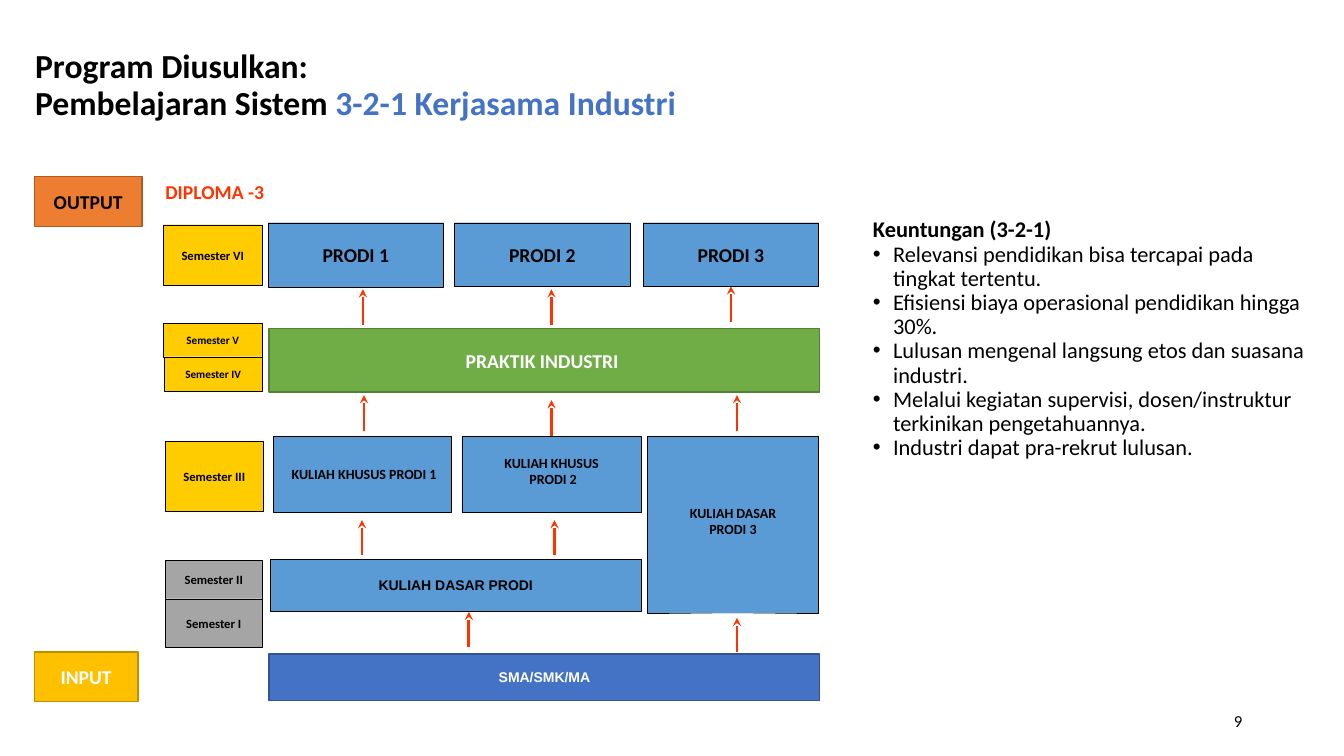
from dataclasses import dataclass

from lxml import etree
from pptx import Presentation
from pptx.dml.color import RGBColor
from pptx.enum.shapes import MSO_CONNECTOR, MSO_SHAPE
from pptx.enum.text import MSO_ANCHOR, PP_ALIGN
from pptx.oxml.ns import qn
from pptx.util import Inches, Pt

STRAIGHT = MSO_CONNECTOR.STRAIGHT
RECTANGLE = MSO_SHAPE.RECTANGLE
TOP, MIDDLE = MSO_ANCHOR.TOP, MSO_ANCHOR.MIDDLE
LEFT, CENTER, RIGHT = PP_ALIGN.LEFT, PP_ALIGN.CENTER, PP_ALIGN.RIGHT
TOP_SIDE, BOTTOM_SIDE = 0, 2

COLORS = {
    "black": "000000", "white": "FFFFFF", "red": "FF3300",
    "blue": "5B9BD5", "navy": "4472C4", "navy edge": "325491",
    "green": "70AD47", "green edge": "538035",
    "amber": "FFC000", "amber edge": "BD8E00",
    "orange": "ED7D31", "orange edge": "AF5C24",
    "yellow": "FFCC00", "grey": "A5A5A5",
}


@dataclass
class Block:
    text: str
    left: float
    top: float
    width: float
    height: float
    fill: str
    size: float
    ink: str = "black"
    font: str = "Calibri"


@dataclass
class Arrow:
    x: float
    bottom: float
    top: float
    start: str = ""
    end: str = ""


BLOCKS = [
    Block("INPUT", 0.34, 6.47, 1.03, 0.49, "amber", 14, "white"),
    Block("SMA/SMK/MA", 2.67, 6.49, 5.46, 0.46, "navy", 10, "white", "Arial"),
    Block("KULIAH DASAR\nPRODI 3", 6.42, 4.33, 1.7, 1.75, "blue", 10),
    Block("PRODI 1", 2.66, 2.21, 1.74, 0.64, "blue", 14),
    Block("PRODI 2", 4.51, 2.21, 1.74, 0.63, "blue", 14),
    Block("PRODI 3", 6.38, 2.21, 1.74, 0.63, "blue", 14),
    Block("Semester VI", 1.62, 2.23, 0.98, 0.6, "yellow", 9),
    Block("PRAKTIK INDUSTRI ", 2.67, 3.26, 5.46, 0.63, "green", 14, "white"),
    Block("Semester V", 1.62, 3.21, 0.98, 0.33, "yellow", 8),
    Block("Semester IV", 1.63, 3.54, 0.97, 0.34, "yellow", 8),
    Block("KULIAH DASAR PRODI", 2.68, 5.55, 3.68, 0.51, "blue", 10, font="Arial"),
    Block("Semester II", 1.64, 5.56, 0.96, 0.38, "grey", 9),
    Block("Semester I", 1.64, 5.94, 0.96, 0.48, "grey", 9),
    Block(" KULIAH KHUSUS PRODI 1", 2.71, 4.33, 1.77, 0.75, "blue", 10),
    Block("KULIAH KHUSUS\n PRODI 2", 4.58, 4.33, 1.78, 0.75, "blue", 10),
    Block("Semester III", 1.64, 4.38, 0.97, 0.69, "yellow", 9),
    Block("OUTPUT", 0.34, 1.75, 1.07, 0.5, "orange", 14),
]

ARROWS = [
    Arrow(3.59, 5.51, 5.16),
    Arrow(5.5, 5.51, 5.16),
    Arrow(4.65, 6.42, 6.07),
    Arrow(7.31, 6.47, 6.13),
    Arrow(3.61, 4.28, 3.92),
    Arrow(5.47, 4.33, 3.97, start="KULIAH KHUSUS\n PRODI 2"),
    Arrow(7.31, 4.28, 3.92),
    Arrow(3.6, 3.22, 2.87),
    Arrow(5.47, 3.22, 2.87),
    Arrow(7.25, 3.19, 2.84, end="PRODI 3"),
]

BENEFITS = [
    "Relevansi pendidikan bisa tercapai pada tingkat tertentu.",
    "Efisiensi biaya operasional pendidikan hingga 30%.",
    "Lulusan mengenal langsung etos dan suasana industri.",
    "Melalui kegiatan supervisi, dosen/instruktur terkinikan pengetahuannya.",
    "Industri dapat pra-rekrut lulusan.",
]


def rgb(name: str) -> RGBColor:
    return RGBColor.from_string(COLORS[name])


def set_all(target, values: dict) -> None:
    for name, value in values.items():
        setattr(target, name, value)


def set_frame(tf, anchor, inset_x: float, inset_y: float) -> None:
    set_all(tf, {
        "word_wrap": True, "vertical_anchor": anchor,
        "margin_left": Inches(inset_x), "margin_right": Inches(inset_x),
        "margin_top": Inches(inset_y), "margin_bottom": Inches(inset_y),
    })


def add_run(p, text: str, size: float, ink: str = "black",
            bold: bool = True, font: str = "Calibri") -> None:
    r = p.add_run()
    r.text = text
    set_all(r.font, {"size": Pt(size), "bold": bold, "name": font})
    r.font.color.rgb = rgb(ink)


def add_block(s, block: Block):
    sp = s.shapes.add_shape(RECTANGLE, Inches(block.left), Inches(block.top),
                            Inches(block.width), Inches(block.height))
    sp.shadow.inherit = False
    sp.fill.solid()
    sp.fill.fore_color.rgb = rgb(block.fill)
    edge = block.fill + " edge"
    sp.line.color.rgb = rgb(edge if edge in COLORS else "black")
    sp.line.width = Pt(1 if edge in COLORS else 0.25)
    tf = sp.text_frame
    set_frame(tf, MIDDLE, 0, 0)
    lines = block.text.split("\n")
    for i, line in enumerate(lines):
        p = tf.add_paragraph() if i else tf.paragraphs[0]
        p.alignment = CENTER
        if len(lines) > 1:
            set_all(p, {"line_spacing": 0.45, "space_before": Pt(6)})
        add_run(p, line, block.size, block.ink, font=block.font)
    return sp


def add_arrow(s, arrow: Arrow, boxes: dict) -> None:
    line = s.shapes.add_connector(STRAIGHT, Inches(arrow.x), Inches(arrow.bottom),
                                  Inches(arrow.x), Inches(arrow.top))
    if arrow.start:
        line.begin_connect(boxes[arrow.start], TOP_SIDE)
    if arrow.end:
        line.end_connect(boxes[arrow.end], BOTTOM_SIDE)
    line.line.color.rgb = rgb("red")
    line.line.width = Pt(2)
    etree.SubElement(line.line._get_or_add_ln(), qn("a:tailEnd"), type="stealth")
    etree.SubElement(line._element.spPr, qn("a:effectLst"))


def add_text(s, left: float, top: float, width: float, height: float,
             anchor=TOP, align=LEFT, inset_x: float = 0.1, inset_y: float = 0.05):
    box = s.shapes.add_textbox(Inches(left), Inches(top), Inches(width), Inches(height))
    set_frame(box.text_frame, anchor, inset_x, inset_y)
    box.text_frame.paragraphs[0].alignment = align
    return box.text_frame


def add_benefits(s) -> None:
    tf = add_text(s, 8.56, 2.12, 4.51, 4.19)
    p = tf.paragraphs[0]
    p.line_spacing = 0.9
    add_run(p, "Keuntungan (3-2-1)", 16)
    for benefit in BENEFITS:
        p = tf.add_paragraph()
        p.line_spacing = 0.9
        pPr = p._p.get_or_add_pPr()
        pPr.set("marL", str(Inches(0.2)))
        pPr.set("indent", str(Inches(-0.2)))
        etree.SubElement(pPr, qn("a:buFont"), typeface="Arial")
        etree.SubElement(pPr, qn("a:buChar"), char="•")
        add_run(p, benefit, 16, bold=False)


def main() -> None:
    prs = Presentation()
    prs.slide_width, prs.slide_height = Inches(13.33), Inches(7.5)
    s = prs.slides.add_slide(prs.slide_layouts[6])
    boxes = {block.text: add_block(s, block) for block in BLOCKS}
    diploma = add_text(s, 1.62, 1.76, 1.61, 0.41, inset_x=0.02, inset_y=0.02)
    add_run(diploma.paragraphs[0], "DIPLOMA -3", 14, "red")
    for arrow in ARROWS:
        add_arrow(s, arrow, boxes)
    number = add_text(s, 9.42, 6.95, 3, 0.4, MIDDLE, RIGHT)
    add_run(number.paragraphs[0], "9", 12, bold=False)
    add_benefits(s)
    p = add_text(s, 0.25, 0.23, 10.41, 1.25, MIDDLE).paragraphs[0]
    p.line_spacing = 0.9
    add_run(p, "Program Diusulkan:", 24)
    p.add_line_break()
    add_run(p, "Pembelajaran Sistem ", 24)
    add_run(p, "3-2-1 Kerjasama Industri", 24, "navy")
    prs.save("out.pptx")


if __name__ == "__main__":
    main()
